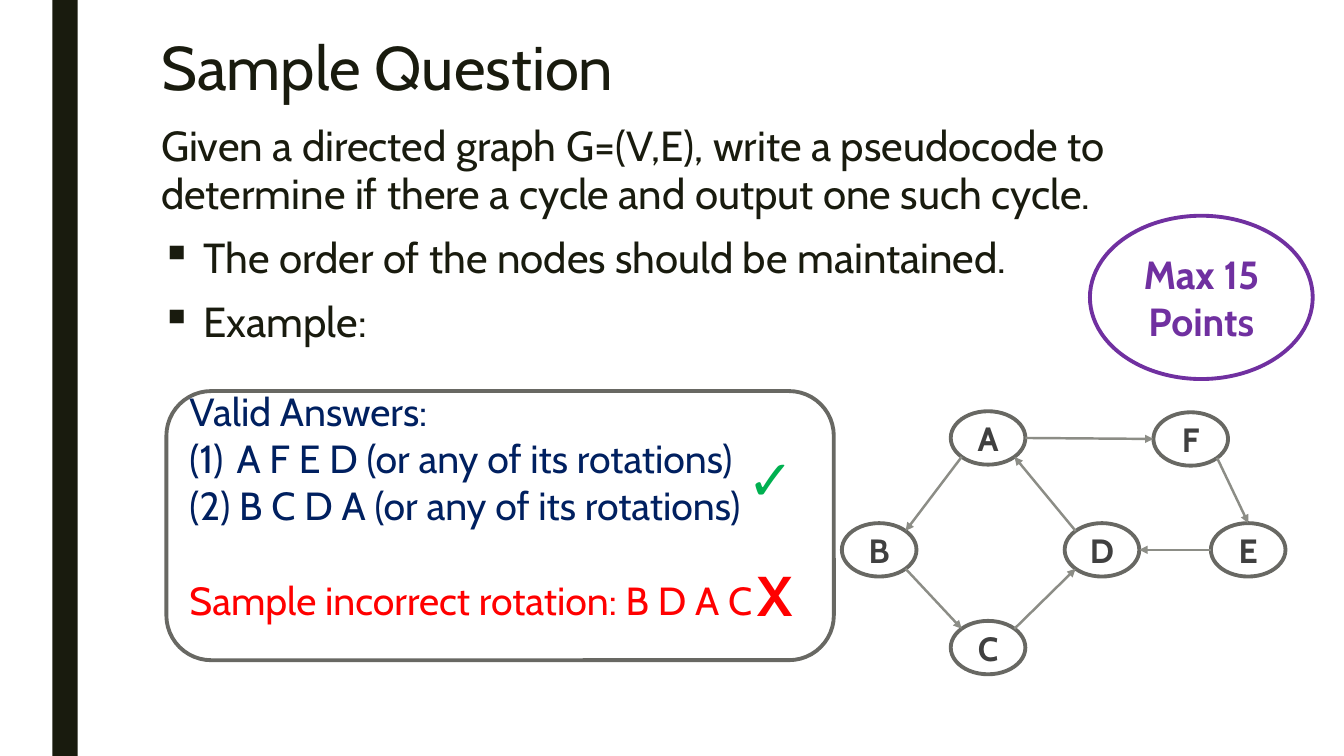
import math

import pptx
import pptx.dml.color
import pptx.enum.shapes
import pptx.enum.text
import pptx.oxml
import pptx.oxml.ns
import pptx.util

Inches = pptx.util.Inches
Pt = pptx.util.Pt
Shape = pptx.enum.shapes.MSO_SHAPE
Anchor = pptx.enum.text.MSO_ANCHOR
Align = pptx.enum.text.PP_ALIGN

FONT = "Cabin"
INK, GREY, ARROW, LABEL = "191B0E", "686863", "8C8D86", "404040"
NAVY, RED, GREEN, PURPLE = "002060", "FF0000", "00B050", "7030A0"


def colour(value):
    """Return the colour object of a hex string."""
    return pptx.dml.color.RGBColor.from_string(value)


def apply(target, values):
    """Set each named attribute of the target."""
    for name, value in values.items():
        setattr(target, name, value)


def add_element(parent, tag, **attributes):
    """Append a DrawingML element with the given attributes."""
    element = pptx.oxml.parse_xml(f"<a:{tag} {pptx.oxml.ns.nsdecls('a')}/>")
    for name, value in attributes.items():
        element.set(name, value)
    parent.append(element)


def write(frame, lines, size, hue, bold=False, frame_format=None, para_format=None):
    """Write lines into a text frame and return the paragraphs."""
    apply(frame, {"word_wrap": True, **(frame_format or {})})
    frame.text = "\n".join(lines)
    for para in frame.paragraphs:
        apply(para, para_format or {})
        for span in para.runs:
            apply(span.font, {"name": FONT, "size": Pt(size), "bold": bold})
            span.font.color.rgb = colour(hue)
    return frame.paragraphs


def add_bullet(para, indent, tag, **attributes):
    """Give a paragraph a hanging indent and a bullet."""
    properties = para._p.get_or_add_pPr()
    properties.set("marL", str(Inches(indent)))
    properties.set("indent", str(-Inches(indent)))
    add_element(properties, tag, **attributes)


def add_outline(page, kind, box, hue):
    """Add an unfilled shape with a coloured outline."""
    shape = page.shapes.add_shape(kind, *map(Inches, box))
    shape.shadow.inherit = False
    shape.fill.background()
    shape.line.width = Pt(2.75)
    shape.line.color.rgb = colour(hue)
    return shape


def add_oval(page, box, text, size, hue, line_hue):
    """Add an outlined oval with a bold centred label."""
    oval = add_outline(page, Shape.OVAL, box, line_hue)
    write(oval.text_frame, [text], size, hue, True,
          {"vertical_anchor": Anchor.MIDDLE}, {"alignment": Align.CENTER})


def add_side_bar(page, box):
    """Add the dark bar along the left edge."""
    bar = page.shapes.add_shape(Shape.RECTANGLE, *map(Inches, box))
    bar.shadow.inherit = False
    bar.fill.solid()
    bar.fill.fore_color.rgb = colour(INK)
    bar.line.fill.background()


def add_title(page, box):
    """Place and format the title."""
    title = page.shapes.title
    apply(title, dict(zip(("left", "top", "width", "height"), map(Inches, box))))
    write(title.text_frame, ["Sample Question"], 44, INK, False,
          {"vertical_anchor": Anchor.TOP, "auto_size": pptx.enum.text.MSO_AUTO_SIZE.NONE},
          {"alignment": Align.LEFT, "line_spacing": 0.89})


def add_question(page, box):
    """Add the question and its bulleted remarks."""
    lines = [
        "Given a directed graph G=(V,E), write a pseudocode to determine "
        "if there a cycle and output one such cycle.",
        "The order of the nodes should be maintained.",
        "Example:",
    ]
    body = page.shapes.add_textbox(*map(Inches, box))
    paras = write(body.text_frame, lines, 30, INK, para_format={
        "line_spacing": 0.94, "space_before": Pt(10), "space_after": Pt(2)})
    for para in paras[1:]:
        add_bullet(para, 0.42, "buChar", char="▪")


def add_graph(page, box):
    """Add the directed graph of six nodes and seven edges."""
    left, top = box[:2]
    width, height = 0.74, 0.53
    nodes = {"A": (1.08, 0), "B": (0, 1.11), "D": (2.21, 1.11),
             "E": (3.66, 1.11), "C": (1.08, 2.08), "F": (3.09, 0.01)}
    edges = [("A", 135, "B", 315), ("B", 45, "C", 225), ("C", 315, "D", 135),
             ("D", 225, "A", 45), ("A", 0, "F", 180), ("F", 45, "E", 270),
             ("E", 180, "D", 0)]

    def rim(name, degrees):
        """Return the point of a node's rim at a clockwise angle."""
        x, y = nodes[name]
        angle = math.radians(degrees)
        return (Inches(left + x + width / 2 * (1 + math.cos(angle))),
                Inches(top + y + height / 2 * (1 + math.sin(angle))))

    for name, (x, y) in nodes.items():
        add_oval(page, (left + x, top + y, width, height), name, 24, LABEL, GREY)
    for start, start_angle, end, end_angle in edges:
        edge = page.shapes.add_connector(
            pptx.enum.shapes.MSO_CONNECTOR.STRAIGHT,
            *rim(start, start_angle), *rim(end, end_angle))
        edge.line.width = Pt(1.75)
        edge.line.color.rgb = colour(ARROW)
        add_element(edge.line._get_or_add_ln(), "tailEnd", type="triangle")
        add_element(edge._element.spPr, "effectLst")


def add_answers(page, box):
    """Add the answer panel with its tick and cross."""
    left, top = box[:2]
    lines = ["Valid Answers:", " A F E D (or any of its rotations)",
             "(2) B C D A (or any of its rotations)",
             "Sample incorrect rotation: B D A C"]
    panel = add_outline(page, Shape.ROUNDED_RECTANGLE, box, GREY)
    paras = write(panel.text_frame, lines, 28, NAVY, False,
                  {"vertical_anchor": Anchor.MIDDLE, "margin_bottom": Inches(0.45)},
                  {"alignment": Align.LEFT})
    add_bullet(paras[1], 0.38, "buAutoNum", type="arabicParenBoth")
    paras[3].space_before = Pt(34)
    paras[3].runs[0].font.color.rgb = colour(RED)
    marks = [("✓", GREEN, 5.67, 0.48, 0.64), ("X", RED, 5.76, 1.63, 0.49)]
    for mark, hue, x, y, width in marks:
        note = page.shapes.add_textbox(
            *map(Inches, (left + x, top + y, width, 0.77)))
        write(note.text_frame, [mark], 40, hue, True, {"word_wrap": False})


def main():
    """Build the slide and save the deck."""
    deck = pptx.Presentation()
    apply(deck, {"slide_width": Inches(13.33), "slide_height": Inches(7.5)})
    page = deck.slides.add_slide(deck.slide_layouts.get_by_name("Title Only"))
    add_side_bar(page, (0.52, 0, 0.25, 7.5))
    add_title(page, (1.5, 0.33, 10.5, 0.97))
    add_question(page, (1.5, 1.18, 10.97, 2.32))
    add_graph(page, (8.35, 4.08, 4.4, 2.61))
    add_answers(page, (1.65, 3.88, 6.62, 2.67))
    add_oval(page, (10.81, 2.14, 2.21, 1.62), "Max 15 Points", 28, PURPLE, PURPLE)
    deck.save("out.pptx")


if __name__ == "__main__":
    main()
